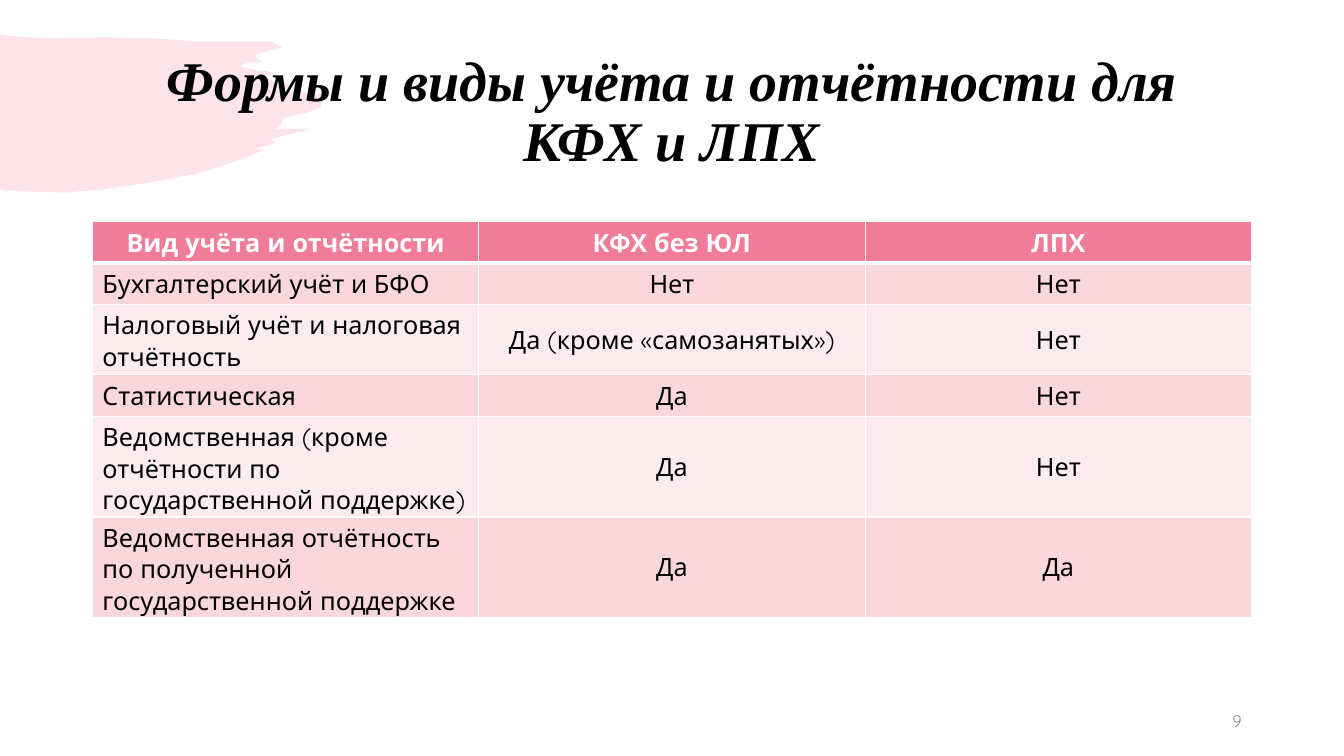
import collections

import lxml.etree
import pptx
import pptx.dml.color
import pptx.enum.text
import pptx.oxml.ns
import pptx.util

Pt = pptx.util.Pt
Align = pptx.enum.text.PP_ALIGN
Middle = pptx.enum.text.MSO_ANCHOR.MIDDLE
qn = pptx.oxml.ns.qn
Box = collections.namedtuple("Box", "left top width height")

BODY_FONT = "Quicksand"
ACCENT = "F07C98"
BANDS = ("F9D7DD", "FCECEF")
TABLE_ROWS = [
    ("Вид учёта и отчётности", "КФХ без ЮЛ", "ЛПХ"),
    ("Бухгалтерский учёт и БФО", "Нет", "Нет"),
    ("Налоговый учёт и налоговая отчётность", "Да (кроме «самозанятых»)", "Нет"),
    ("Статистическая", "Да", "Нет"),
    ("Ведомственная (кроме отчётности по государственной поддержке)", "Да", "Нет"),
    ("Ведомственная отчётность по полученной государственной поддержке", "Да", "Да"),
]
# Brush outline on a grid 330 units wide
BRUSH_WIDTH = 330
BRUSH_OUTLINE = [
    (0, 0), (6, 1), (25, 3), (66, 4), (102, 3), (151, 4), (194, 7), (248, 7),
    (268, 7), (280, 13), (271, 15), (255, 20), (253, 23), (256, 25), (262, 28),
    (246, 28), (238, 32), (246, 34), (256, 36), (266, 37), (275, 40), (251, 41),
    (263, 44), (273, 47), (276, 49), (280, 48), (288, 49), (290, 51), (287, 54),
    (284, 54), (263, 54), (296, 58), (330, 60), (321, 63), (318, 72), (307, 77),
    (300, 79), (283, 82), (280, 86), (278, 91), (274, 94), (308, 94), (269, 104),
    (273, 108), (252, 114), (263, 114), (240, 124), (197, 138), (150, 147),
    (102, 154), (65, 157), (23, 156), (7, 155), (0, 154),
]


def color(value):
    return pptx.dml.color.RGBColor.from_string(value)


def paint(fill, value):
    fill.solid()
    fill.fore_color.rgb = color(value)


def write(frame, text, size, font, tone, align, bold=False, italic=False):
    """Fill the first paragraph of a text frame with one run."""
    para = frame.paragraphs[0]
    para.alignment = align
    span = para.add_run()
    span.text = text
    span.font.size = Pt(size)
    span.font.name = font
    span.font.color.rgb = color(tone)
    span.font.bold = bold
    span.font.italic = italic
    return para


def add_text(page, box, *args, **kwargs):
    frame = page.shapes.add_textbox(*map(Pt, box)).text_frame
    frame.word_wrap = True
    frame.vertical_anchor = Middle
    return write(frame, *args, **kwargs)


def add_brush(page, box):
    unit = Pt(box.width) / BRUSH_WIDTH
    builder = page.shapes.build_freeform(*BRUSH_OUTLINE[0], scale=unit)
    builder.add_line_segments(BRUSH_OUTLINE[1:], close=True)
    brush = builder.convert_to_shape(Pt(box.left), Pt(box.top))
    brush.shadow.inherit = False
    brush.line.fill.background()
    paint(brush.fill, ACCENT)
    tone = next(brush.fill._xPr.iter(qn("a:srgbClr")))
    lxml.etree.SubElement(tone, qn("a:alpha"), val="20000")


def add_title(page, box):
    para = add_text(page, box, "Формы и виды учёта и отчётности для КФХ и ЛПХ", 40,
                    "Times New Roman", "000000", Align.CENTER, bold=True, italic=True)
    para.line_spacing = 0.9


def set_borders(cell, **widths):
    properties = cell._tc.get_or_add_tcPr()
    for side, width in widths.items():
        line = lxml.etree.SubElement(properties, qn(f"a:ln{side}"), w=str(Pt(width)))
        fill = lxml.etree.SubElement(line, qn("a:solidFill"))
        lxml.etree.SubElement(fill, qn("a:srgbClr"), val="FFFFFF")


def add_reports_table(page, box):
    table = page.shapes.add_table(len(TABLE_ROWS), 3, *map(Pt, box)).table
    for i, texts in enumerate(TABLE_ROWS):
        header = i == 0
        for j, text in enumerate(texts):
            cell = table.cell(i, j)
            cell.vertical_anchor = Middle
            set_borders(cell, L=1, R=1, T=3 if i == 1 else 1, B=3 if header else 1)
            paint(cell.fill, ACCENT if header else BANDS[(i - 1) % 2])
            write(cell.text_frame, text, 18, BODY_FONT, "FFFFFF" if header else "000000",
                  Align.CENTER if header or j else Align.LEFT, bold=header)


def add_page_number(page, box):
    add_text(page, box, "9", 12, BODY_FONT, "8C8C8C", Align.RIGHT)


def main():
    deck = pptx.Presentation()
    deck.slide_width, deck.slide_height = Pt(960), Pt(540)
    page = deck.slides.add_slide(deck.slide_layouts[6])
    add_brush(page, Box(0, 24.5, 237.6, 113))
    add_title(page, Box(66, 28.75, 828, 104.4))
    add_reports_table(page, Box(66, 158.4, 828, 177))
    add_page_number(page, Box(678, 500.5, 216, 28.75))
    deck.save("out.pptx")


if __name__ == "__main__":
    main()
